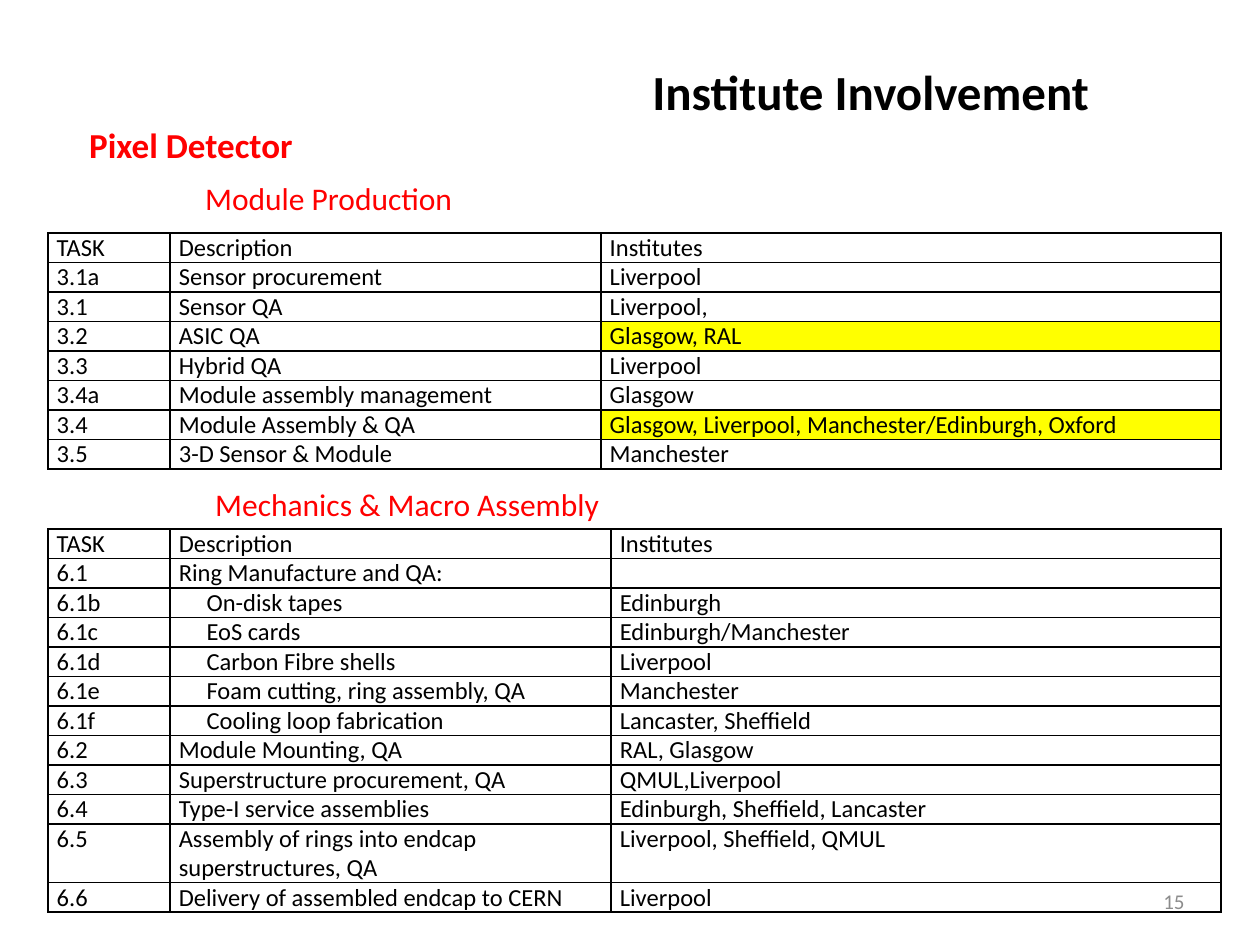
"""Build the Institute Involvement slide with its two task tables."""
from lxml import etree
from pptx import Presentation
from pptx import util as u
from pptx.dml.color import RGBColor
from pptx.enum import text as t
from pptx.oxml import ns

FONT = "Calibri"
BLACK, RED, GREY, YELLOW = "000000", "FF0000", "8C8C8C", "FFFF00"
HEAD = ("TASK", "Description", "Institutes")
LEFT, ROW, PAD, STEP = 0.38, 0.23, 0.07, 0.22

TITLES = [
    ("Mechanics & Macro Assembly", (1.61, 3.8, 3.28, 0.4), 18, RED, False),
    ("Pixel Detector", (0.61, 0.93, 1.83, 0.44), 20, RED, True),
    ("Institute Involvement", (5.08, 0.44, 3.71, 0.57), 28, BLACK, True),
    ("Module Production", (1.53, 1.37, 2.19, 0.4), 18, RED, False),
]
MODULES = [
    HEAD,
    ("3.1a", "Sensor procurement", "Liverpool"),
    ("3.1", "Sensor QA", "Liverpool,"),
    ("3.2", "ASIC QA", "Glasgow, RAL"),
    ("3.3", "Hybrid QA", "Liverpool"),
    ("3.4a", "Module assembly management", "Glasgow"),
    ("3.4", "Module Assembly & QA", "Glasgow, Liverpool, Manchester/Edinburgh, Oxford"),
    ("3.5", "3-D Sensor & Module", "Manchester"),
]
MACRO = [
    HEAD,
    ("6.1", "Ring Manufacture and QA:", ""),
    ("6.1b", "On-disk tapes", "Edinburgh"),
    ("6.1c", "EoS cards", "Edinburgh/Manchester"),
    ("6.1d", "Carbon Fibre shells", "Liverpool"),
    ("6.1e", "Foam cutting, ring assembly, QA", "Manchester"),
    ("6.1f", "Cooling loop fabrication", "Lancaster, Sheffield"),
    ("6.2", "Module Mounting, QA", "RAL, Glasgow"),
    ("6.3", "Superstructure procurement, QA", "QMUL,Liverpool"),
    ("6.4", "Type-I service assemblies", "Edinburgh, Sheffield, Lancaster"),
    ("6.5", "Assembly of rings into endcap superstructures, QA", "Liverpool, Sheffield, QMUL"),
    ("6.6", "Delivery of assembled endcap to CERN", "Liverpool"),
]
TABLES = [
    (MODULES, 1.85, (0.97, 3.42, 4.92), {"3.2", "3.4"}, set(), set()),
    (MACRO, 4.2, (0.97, 3.5, 4.84), set(), {"6.1b", "6.1c", "6.1d", "6.1e", "6.1f"}, {"6.5"}),
]


def color(code):
    return RGBColor.from_string(code)


def style(para, size, code, bold=False):
    for run in para.runs:
        font = run.font
        font.name, font.size, font.bold = FONT, u.Pt(size), bold
        font.color.rgb = color(code)


def add_text(slide, words, box, size, code, bold=False):
    frame = slide.shapes.add_textbox(*map(u.Inches, box)).text_frame
    frame.text = words
    frame.word_wrap = False
    style(frame.paragraphs[0], size, code, bold)
    return frame


def add_edges(cell):
    props = cell._tc.get_or_add_tcPr()
    for side in ("lnL", "lnR", "lnT", "lnB"):
        line = etree.SubElement(props, ns.qn("a:" + side), w=str(u.Pt(1)))
        fill = etree.SubElement(line, ns.qn("a:solidFill"))
        etree.SubElement(fill, ns.qn("a:srgbClr"), val=BLACK)


def fill_cell(cell, words, lit, deep):
    cell.margin_left = cell.margin_right = u.Inches(PAD)
    cell.margin_top = cell.margin_bottom = 0
    cell.text_frame.text = words
    para = cell.text_frame.paragraphs[0]
    style(para, 14, BLACK)
    if not words:
        etree.SubElement(para._p, ns.qn("a:endParaRPr"), sz="1400")
    if deep:
        para._p.get_or_add_pPr().set("marL", str(u.Inches(STEP)))
    add_edges(cell)
    if lit:
        cell.fill.solid()
        cell.fill.fore_color.rgb = color(YELLOW)
    else:
        cell.fill.background()


def add_grid(slide, rows, top, widths, marked, nested, tall):
    highs = [ROW * (2 if row[0] in tall else 1) for row in rows]
    box = map(u.Inches, (LEFT, top, sum(widths), sum(highs)))
    table = slide.shapes.add_table(len(rows), len(widths), *box).table
    table.first_row = table.horz_banding = False
    for col, width in zip(table.columns, widths):
        col.width = u.Inches(width)
    for r, row in enumerate(rows):
        table.rows[r].height = u.Inches(highs[r])
        for c, words in enumerate(row):
            lit = c == 2 and row[0] in marked
            deep = c == 1 and row[0] in nested
            fill_cell(table.cell(r, c), words, lit, deep)


def main():
    deck = Presentation()
    deck.slide_width, deck.slide_height = u.Inches(10), u.Inches(7.5)
    slide = deck.slides.add_slide(deck.slide_layouts[6])
    for title in TITLES:
        add_text(slide, *title)
    for grid in TABLES:
        add_grid(slide, *grid)
    number = add_text(slide, "15", (7.17, 6.95, 2.33, 0.4), 12, GREY)
    number.word_wrap = True
    number.vertical_anchor = t.MSO_ANCHOR.MIDDLE
    number.paragraphs[0].alignment = t.PP_ALIGN.RIGHT
    deck.save("out.pptx")


if __name__ == "__main__":
    main()
